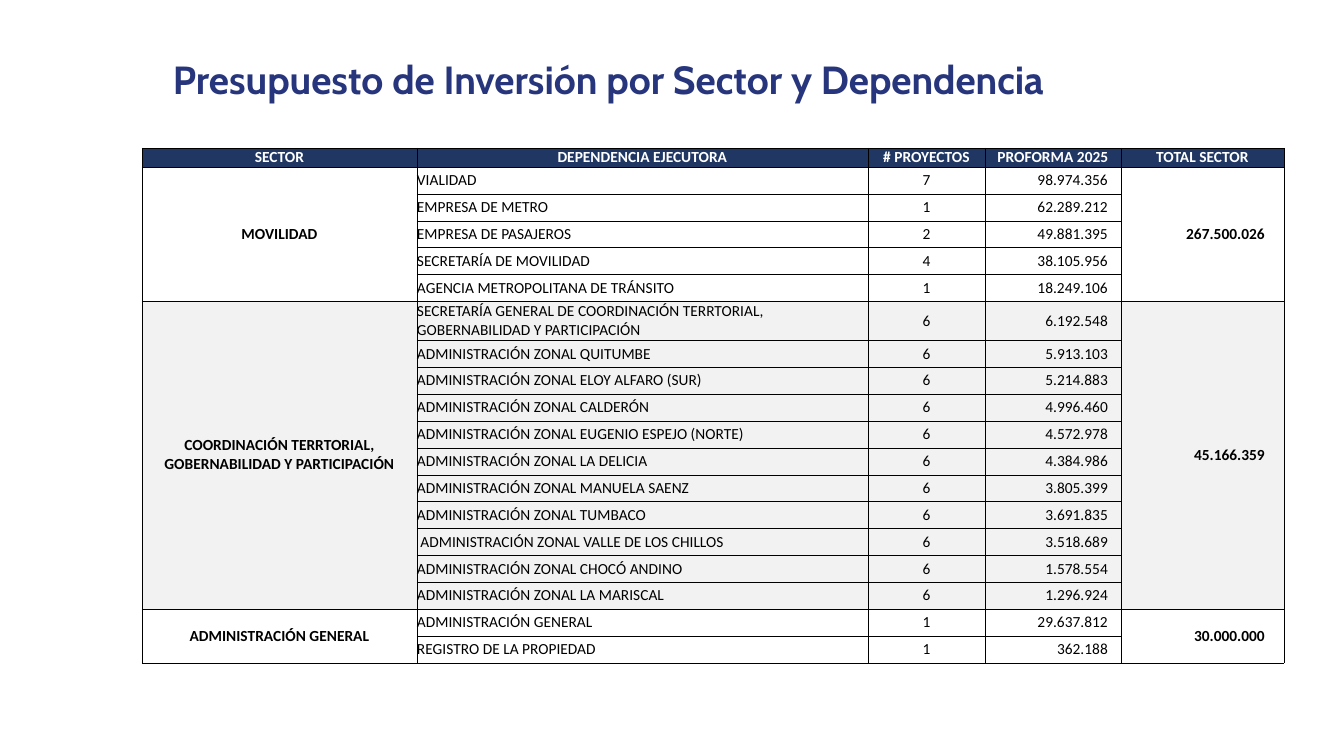
from lxml.etree import SubElement
from pptx import Presentation
from pptx.dml.color import RGBColor
from pptx.enum.text import MSO_ANCHOR, PP_ALIGN
from pptx.oxml.ns import qn
from pptx.util import Pt

PX = 914400 / 100.8  # EMU in one px
NAVY = RGBColor(0x20, 0x37, 0x64)
BLUE = RGBColor(0x27, 0x36, 0x7C)
GREY = RGBColor(0xF2, 0xF2, 0xF2)
BLACK = RGBColor(0, 0, 0)
WHITE = RGBColor(255, 255, 255)
LEFT, MID, RIGHT = PP_ALIGN.LEFT, PP_ALIGN.CENTER, PP_ALIGN.RIGHT

HEADS = ["SECTOR", "DEPENDENCIA EJECUTORA", "# PROYECTOS", "PROFORMA 2025", "TOTAL SECTOR"]
WIDTHS = [275, 451, 117, 136, 163]
HEAD_H, TALL_H = 19, 39
TALL = 6  # row with two lines of text

# Sector, total, fill, rows of (unit, projects, budget)
SECTORS = [
    ("MOVILIDAD", "267.500.026", None, [
        ("VIALIDAD", "7", "98.974.356"),
        ("EMPRESA DE METRO", "1", "62.289.212"),
        ("EMPRESA DE PASAJEROS", "2", "49.881.395"),
        ("SECRETARÍA DE MOVILIDAD", "4", "38.105.956"),
        ("AGENCIA METROPOLITANA DE TRÁNSITO", "1", "18.249.106"),
    ]),
    ("COORDINACIÓN TERRTORIAL, GOBERNABILIDAD Y PARTICIPACIÓN", "45.166.359", GREY, [
        ("SECRETARÍA GENERAL DE COORDINACIÓN TERRTORIAL, GOBERNABILIDAD Y PARTICIPACIÓN",
         "6", "6.192.548"),
        ("ADMINISTRACIÓN ZONAL QUITUMBE", "6", "5.913.103"),
        ("ADMINISTRACIÓN ZONAL ELOY ALFARO (SUR)", "6", "5.214.883"),
        ("ADMINISTRACIÓN ZONAL CALDERÓN", "6", "4.996.460"),
        ("ADMINISTRACIÓN ZONAL EUGENIO ESPEJO (NORTE)", "6", "4.572.978"),
        ("ADMINISTRACIÓN ZONAL LA DELICIA", "6", "4.384.986"),
        ("ADMINISTRACIÓN ZONAL MANUELA SAENZ", "6", "3.805.399"),
        ("ADMINISTRACIÓN ZONAL TUMBACO", "6", "3.691.835"),
        (" ADMINISTRACIÓN ZONAL VALLE DE LOS CHILLOS", "6", "3.518.689"),
        ("ADMINISTRACIÓN ZONAL CHOCÓ ANDINO", "6", "1.578.554"),
        ("ADMINISTRACIÓN ZONAL LA MARISCAL", "6", "1.296.924"),
    ]),
    ("ADMINISTRACIÓN GENERAL", "30.000.000", None, [
        ("ADMINISTRACIÓN GENERAL", "1", "29.637.812"),
        ("REGISTRO DE LA PROPIEDAD", "1", "362.188"),
    ]),
]


def emu(px):
    return round(px * PX)


def style(para, font, size, color, bold, align):
    para.alignment = align
    para.font.name, para.font.size = font, Pt(size)
    para.font.color.rgb, para.font.bold = color, bold


def frame(cell, fill):
    """Thin black borders, then the fill."""
    props = cell._tc.get_or_add_tcPr()
    for side in ("lnL", "lnR", "lnT", "lnB"):
        line = SubElement(props, qn("a:" + side), w=str(Pt(0.25)))
        paint = SubElement(line, qn("a:solidFill"))
        SubElement(paint, qn("a:srgbClr"), val=str(BLACK))
    if fill is None:
        cell.fill.background()
    else:
        cell.fill.solid()
        cell.fill.fore_color.rgb = fill


def write(cell, text, align=MID, bold=False, color=BLACK, inset=0):
    cell.text = text
    cell.vertical_anchor = MSO_ANCHOR.MIDDLE
    cell.margin_left = cell.margin_top = cell.margin_bottom = 0
    cell.margin_right = emu(inset)
    style(cell.text_frame.paragraphs[0], "Calibri", 11, color, bold, align)


def add_title(slide, x, y, w, h):
    box = slide.shapes.add_textbox(*map(emu, (x, y, w, h)))
    text = box.text_frame
    text.word_wrap = True
    text.vertical_anchor = MSO_ANCHOR.MIDDLE
    text.text = "Presupuesto de Inversión por Sector y Dependencia"
    para = text.paragraphs[0]
    para.line_spacing = 0.9
    style(para, "Cabin", 28, BLUE, True, LEFT)


def add_budget(slide, x, y, w, h):
    count = 1 + sum(len(units) for *_, units in SECTORS)
    grid = slide.shapes.add_table(count, len(HEADS), *map(emu, (x, y, w, h))).table
    grid.first_row = grid.horz_banding = False

    # Sizes: plain rows share what the header and tall row leave
    for col, width in zip(grid.columns, WIDTHS):
        col.width = emu(width * w / sum(WIDTHS))
    plain = (h - HEAD_H - TALL_H) / (count - 2)
    for i, row in enumerate(grid.rows):
        row.height = emu({0: HEAD_H, TALL: TALL_H}.get(i, plain))

    # Header
    for i, head in enumerate(HEADS):
        frame(grid.cell(0, i), NAVY)
        write(grid.cell(0, i), head, bold=True, color=WHITE)

    # Sectors
    top = 1
    for name, total, fill, units in SECTORS:
        last = top + len(units) - 1
        for r, (unit, projects, budget) in enumerate(units, top):
            for c in range(len(HEADS)):
                frame(grid.cell(r, c), fill)
            write(grid.cell(r, 1), unit, LEFT)
            write(grid.cell(r, 2), projects)
            write(grid.cell(r, 3), budget, RIGHT, inset=13)
        for c in (0, 4):
            grid.cell(top, c).merge(grid.cell(last, c))
        write(grid.cell(top, 0), name, bold=True)
        write(grid.cell(top, 4), total, RIGHT, bold=True, inset=19)
        top = last + 1


def main():
    deck = Presentation()
    deck.slide_width, deck.slide_height = emu(1344), emu(756)
    slide = deck.slides.add_slide(deck.slide_layouts[6])
    add_budget(slide, 142, 148, 1142, 515)
    add_title(slide, 163, 16, 1162, 132)
    deck.save("out.pptx")


if __name__ == "__main__":
    main()
